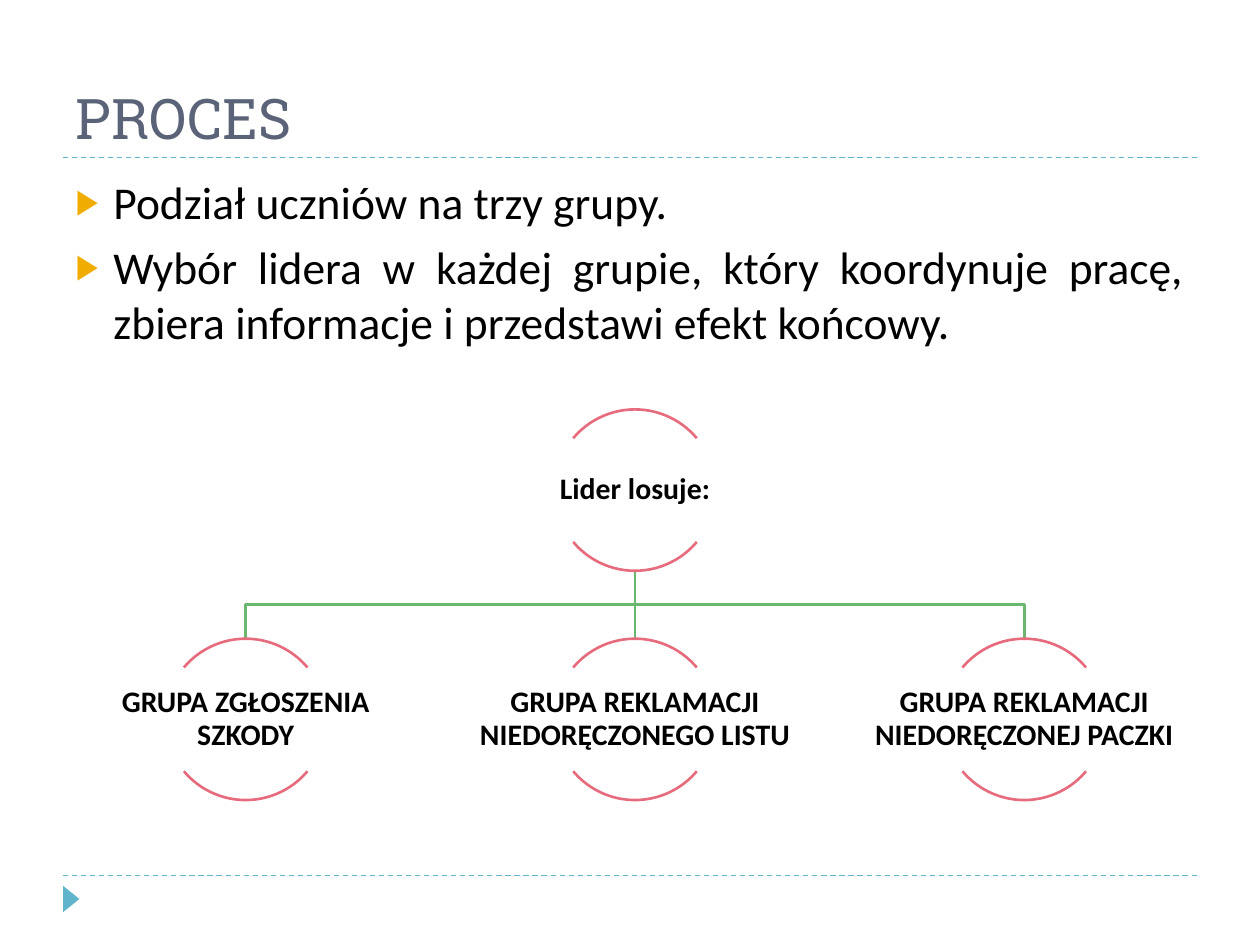
import collections

import lxml.etree
import pptx
import pptx.dml.color
import pptx.enum.dml
import pptx.enum.shapes
import pptx.enum.text
import pptx.oxml.ns
import pptx.util

COLOURS = {"title": "5A6378", "text": "000000", "bullet": "F0AD00",
           "rule": "60B5CC", "arc": "E66C7D", "branch": "6BB76D"}
POINTS = ["Podział uczniów na trzy grupy.",
          "Wybór lidera w każdej grupie, który koordynuje pracę, "
          "zbiera informacje i przedstawi efekt końcowy."]
LEADER = "Lider losuje:"
GROUPS = ["GRUPA ZGŁOSZENIA SZKODY", "GRUPA REKLAMACJI NIEDORĘCZONEGO LISTU",
          "GRUPA REKLAMACJI NIEDORĘCZONEJ PACZKI"]
ARC_SPANS = [(132, 192), (24, 84)]
Box = collections.namedtuple("Box", "left top width height")
Inches = pptx.util.Inches
Kind = pptx.enum.shapes.MSO_SHAPE
Align = pptx.enum.text.PP_ALIGN
Anchor = pptx.enum.text.MSO_ANCHOR


def rgb(name):
    """Return the named colour."""
    return pptx.dml.color.RGBColor.from_string(COLOURS[name])


def lengths(box):
    """Turn a box in inches into slide lengths."""
    return [Inches(value) for value in box]


def style_font(para, face, size, colour, bold=False):
    """Format every run of a paragraph."""
    for span in para.runs:
        span.font.name = face
        span.font.size = pptx.util.Pt(size)
        span.font.bold = bold
        span.font.color.rgb = rgb(colour)


def style_line(shape, colour, width):
    """Give a shape or connector a plain coloured line."""
    shape.line.color.rgb = rgb(colour)
    shape.line.width = pptx.util.Pt(width)


def add_line(page, start, end, colour, width):
    """Draw a straight connector without a shadow."""
    line = page.shapes.add_connector(
        pptx.enum.shapes.MSO_CONNECTOR.STRAIGHT, *lengths(start + end))
    style_line(line, colour, width)
    lxml.etree.SubElement(line._element.spPr, pptx.oxml.ns.qn("a:effectLst"))
    return line


def add_frame(page, box):
    """Draw the dashed rules and the footer marker."""
    for y in (box.top, box.top + box.height):
        rule = add_line(page, (box.left, y), (box.left + box.width, y), "rule", 0.75)
        rule.line.dash_style = pptx.enum.dml.MSO_LINE.DASH
    marker = page.shapes.add_shape(
        Kind.ISOSCELES_TRIANGLE,
        *lengths((box.left - 0.04, box.top + box.height + 0.12, 0.21, 0.13)))
    marker.rotation = 90
    marker.shadow.inherit = False
    marker.fill.solid()
    marker.fill.fore_color.rgb = rgb("rule")
    marker.line.fill.background()


def place_placeholder(holder, box, text, anchor):
    """Position a placeholder and set its text."""
    holder.left, holder.top, holder.width, holder.height = lengths(box)
    frame = holder.text_frame
    frame.text = text
    frame.auto_size = pptx.enum.text.MSO_AUTO_SIZE.NONE
    frame.vertical_anchor = anchor
    return frame


def add_title(page, box):
    """Fill the title placeholder."""
    para = place_placeholder(page.shapes.title, box, "PROCES", Anchor.BOTTOM).paragraphs[0]
    para.alignment = Align.LEFT
    style_font(para, "Roboto Slab", 32, "title")


def add_bullet(para):
    """Give a paragraph a hanging coloured triangle bullet."""
    props = para._p.get_or_add_pPr()
    props.set("marL", str(Inches(0.3)))
    props.set("indent", str(-Inches(0.3)))
    qn = pptx.oxml.ns.qn
    colour = lxml.etree.SubElement(props, qn("a:buClr"))
    lxml.etree.SubElement(colour, qn("a:srgbClr"), val=COLOURS["bullet"])
    lxml.etree.SubElement(props, qn("a:buSzPct"), val="76000")
    lxml.etree.SubElement(props, qn("a:buChar"), char="▶")


def add_points(page, box):
    """Fill the body placeholder with the list."""
    frame = place_placeholder(page.placeholders[1], box, "\n".join(POINTS), Anchor.TOP)
    for para in frame.paragraphs:
        para.alignment = Align.JUSTIFY
        para.space_before = pptx.util.Pt(6)
        add_bullet(para)
        style_font(para, "Calibri", 26, "text")


def add_node(page, box, text):
    """Draw a label between two arcs of a ring centred in the box."""
    ring = box.height
    for span in ARC_SPANS:
        arc = page.shapes.add_shape(
            Kind.ARC, *lengths((box.left + (box.width - ring) / 2, box.top, ring, ring)))
        arc.adjustments[0], arc.adjustments[1] = span
        arc.shadow.inherit = False
        arc.fill.background()
        style_line(arc, "arc", 1.5)
    label = page.shapes.add_textbox(
        *lengths((box.left, box.top + 0.18 * ring, box.width, 0.64 * ring)))
    frame = label.text_frame
    frame.word_wrap = True
    frame.vertical_anchor = Anchor.MIDDLE
    frame.margin_left = frame.margin_right = Inches(0.01)
    frame.margin_top = frame.margin_bottom = Inches(0.01)
    frame.text = text
    para = frame.paragraphs[0]
    para.alignment = Align.CENTER
    para.line_spacing = 0.9
    style_font(para, "Calibri", 17, "text", bold=True)


def add_branch(page, start, end):
    """Link a parent to a child, with an elbow when they are not aligned."""
    if start[0] == end[0]:
        add_line(page, start, end, "branch", 1.5)
        return
    middle = (start[1] + end[1]) / 2
    corners = [(start[0], middle), (end[0], middle), end]
    builder = page.shapes.build_freeform(*lengths(start))
    builder.add_line_segments([lengths(corner) for corner in corners], close=False)
    elbow = builder.convert_to_shape()
    elbow.shadow.inherit = False
    elbow.fill.background()
    style_line(elbow, "branch", 1.5)


def add_tree(page, box):
    """Draw the leader above an even row of groups."""
    ring = box.height * 0.413
    width = 2 * ring
    pitch = (box.width - width) / (len(GROUPS) - 1)
    row = box.top + box.height - ring
    leader = Box(box.left + pitch, box.top, width, ring)
    nodes = [Box(box.left + pitch * column, row, width, ring)
             for column in range(len(GROUPS))]
    for node in nodes:
        add_branch(page, (leader.left + ring, leader.top + ring), (node.left + ring, row))
    add_node(page, leader, LEADER)
    for node, text in zip(nodes, GROUPS):
        add_node(page, node, text)


def main():
    """Build the slide and save it."""
    deck = pptx.Presentation()
    deck.slide_width, deck.slide_height = Inches(10), Inches(7.5)
    page = deck.slides.add_slide(deck.slide_layouts[1])
    add_frame(page, Box(0.5, 1.25, 9, 5.7))
    add_title(page, Box(0.5, 0.17, 9, 1.08))
    add_points(page, Box(0.5, 1.33, 9, 1.87))
    add_tree(page, Box(0.67, 3.25, 8.74, 3.1))
    deck.save("out.pptx")


if __name__ == "__main__":
    main()
